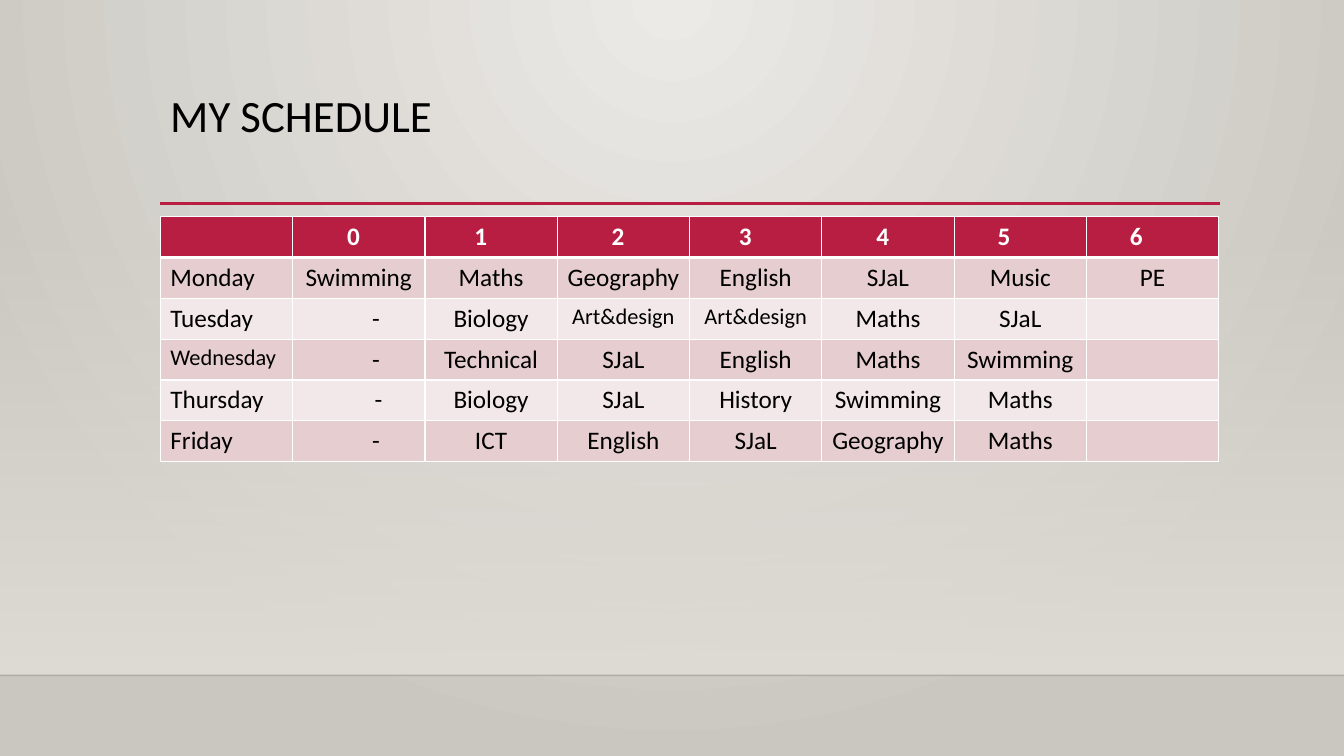
from lxml import etree
from pptx import Presentation
from pptx.dml.color import RGBColor
from pptx.enum.shapes import MSO_CONNECTOR, MSO_SHAPE
from pptx.enum.text import MSO_ANCHOR, PP_ALIGN
from pptx.oxml import parse_xml
from pptx.oxml.ns import qn
from pptx.util import Inches, Pt

TITLE = "MY SCHEDULE"
HEADS = ["", "0", "1", "2", "3", "4", "5", "6"]
DAYS = [
    ["Monday", "Swimming", "Maths", "Geography", "English", "SJaL", "Music", "PE"],
    ["Tuesday", "-", "Biology", "Art&design", "Art&design", "Maths", "SJaL", ""],
    ["Wednesday", "-", "Technical", "SJaL", "English", "Maths", "Swimming", ""],
    ["Thursday", "-", "Biology", "SJaL", "History", "Swimming", "Maths", ""],
    ["Friday", "-", "ICT", "English", "SJaL", "Geography", "Maths", ""],
]
HEAD_INDENTS = [0, 0.44, 0.39, 0.44, 0.39, 0.44, 0.33, 0.33]
DASH_INDENTS = {"Tuesday": 0.34, "Wednesday": 0.34, "Thursday": 0.39, "Friday": 0.34}
SMALL = {"Art&design", "Wednesday"}

FONT = "Calibri"
BLACK = RGBColor(0, 0, 0)
WHITE = RGBColor(0xFF, 0xFF, 0xFF)
RED = RGBColor(0xB7, 0x1E, 0x42)
FLOOR = RGBColor(0, 0, 1)
BANDS = [RGBColor(0xE6, 0xCD, 0xCF), RGBColor(0xF3, 0xE8, 0xE9)]
LEFT, CENTER = PP_ALIGN.LEFT, PP_ALIGN.CENTER
TOP, RECT, STRAIGHT = MSO_ANCHOR.TOP, MSO_SHAPE.RECTANGLE, MSO_CONNECTOR.STRAIGHT
NS = 'xmlns:a="http://schemas.openxmlformats.org/drawingml/2006/main"'

GLOW = '<a:path path="circle"><a:fillToRect l="43000" t="0" r="43000" b="100000"/></a:path>'
DOWN = '<a:lin ang="5400000" scaled="0"/>'


def blend(fill, holder, stops, way):
    """Give the fill a gradient of (position, colour, opacity) stops in percent."""
    fill.gradient()
    marks = "".join(
        f'<a:gs pos="{pos * 1000}"><a:srgbClr val="{color}">'
        f'<a:alpha val="{alpha * 1000}"/></a:srgbClr></a:gs>'
        for pos, color, alpha in stops
    )
    old = holder.find(".//" + qn("a:gradFill"))
    new = parse_xml(f'<a:gradFill {NS} rotWithShape="1"><a:gsLst>{marks}</a:gsLst>{way}</a:gradFill>')
    old.getparent().replace(old, new)


def rule(slide, x1, x2, y, color, width):
    line = slide.shapes.add_connector(STRAIGHT, Inches(x1), Inches(y), Inches(x2), Inches(y))
    line.line.color.rgb = color
    line.line.width = Pt(width)
    etree.SubElement(line._element.spPr, qn("a:effectLst"))
    return line


def style(font, **values):
    font.name = FONT
    font.color.rgb = values.pop("color")
    for key, value in values.items():
        setattr(font, key, value)


def border(cell, top, bottom):
    props = cell._tc.get_or_add_tcPr()
    for spot, (side, width) in enumerate((("L", 1), ("R", 1), ("T", top), ("B", bottom))):
        props.insert(spot, parse_xml(
            f'<a:ln{side} {NS} w="{Pt(width)}"><a:solidFill><a:srgbClr val="{WHITE}"/>'
            f'</a:solidFill></a:ln{side}>'))


def backdrop(slide):
    back = slide.background
    blend(back.fill, slide._element, [(0, "ECEAE7", 100), (100, "CAC7C1", 100)], GLOW)
    wall = slide.shapes.add_shape(RECT, 0, Inches(2.21), Inches(13.33), Inches(4.49))
    wall.shadow.inherit = False
    wall.line.fill.background()
    blend(wall.fill, wall._element, [(0, "DFDBD5", 0), (100, "DFDBD5", 100)], DOWN)
    edge = rule(slide, 0, 13.33, 6.7, FLOOR, 1)
    tint = edge._element.find(".//" + qn("a:ln")).find(".//" + qn("a:srgbClr"))
    etree.SubElement(tint, qn("a:alpha")).set("val", "20000")
    rule(slide, 1.59, 12.1, 2.02, RED, 2.5)


def heading(slide):
    box = slide.shapes.add_textbox(Inches(1.59), Inches(0.88), Inches(10.5), Inches(1.15))
    frame = box.text_frame
    frame.word_wrap = True
    frame.vertical_anchor = TOP
    para = frame.paragraphs[0]
    para.line_spacing = 0.9
    run = para.add_run()
    run.text = TITLE
    style(run.font, size=Pt(32), color=BLACK)


def timetable(slide):
    rows = [HEADS] + DAYS
    table = slide.shapes.add_table(
        len(rows), len(HEADS), Inches(1.59), Inches(2.15), Inches(10.5), Inches(2.43)).table
    table.horz_banding = False
    for r, row in enumerate(rows):
        head = r == 0
        for c, text in enumerate(row):
            cell = table.cell(r, c)
            cell.fill.solid()
            cell.fill.fore_color.rgb = RED if head else BANDS[(r - 1) % 2]
            border(cell, 3 if r == 1 else 1, 3 if head else 1)
            if not text:
                continue
            para = cell.text_frame.paragraphs[0]
            para.alignment = LEFT if head or c == 0 else CENTER
            indent = HEAD_INDENTS[c] if head else DASH_INDENTS[row[0]] if text == "-" else 0
            if indent:
                para._p.get_or_add_pPr().set("marL", str(Inches(indent)))
            run = para.add_run()
            run.text = text
            style(run.font, size=Pt(16 if text in SMALL else 18), bold=head,
                  color=WHITE if head else BLACK)


def main():
    deck = Presentation()
    deck.slide_width, deck.slide_height = Inches(13.33), Inches(7.5)
    slide = deck.slides.add_slide(deck.slide_layouts[6])
    backdrop(slide)
    heading(slide)
    timetable(slide)
    deck.save("out.pptx")


if __name__ == "__main__":
    main()
